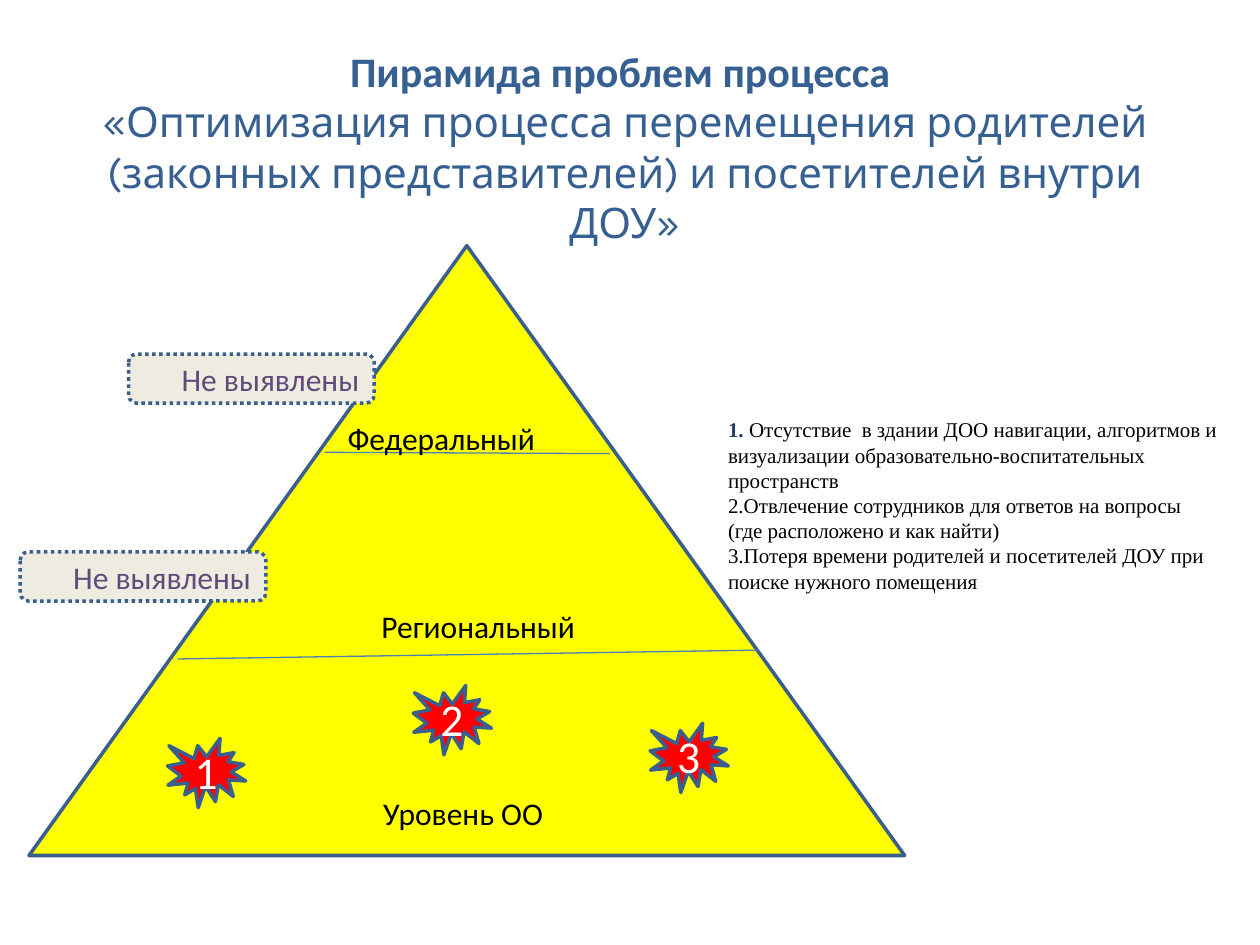
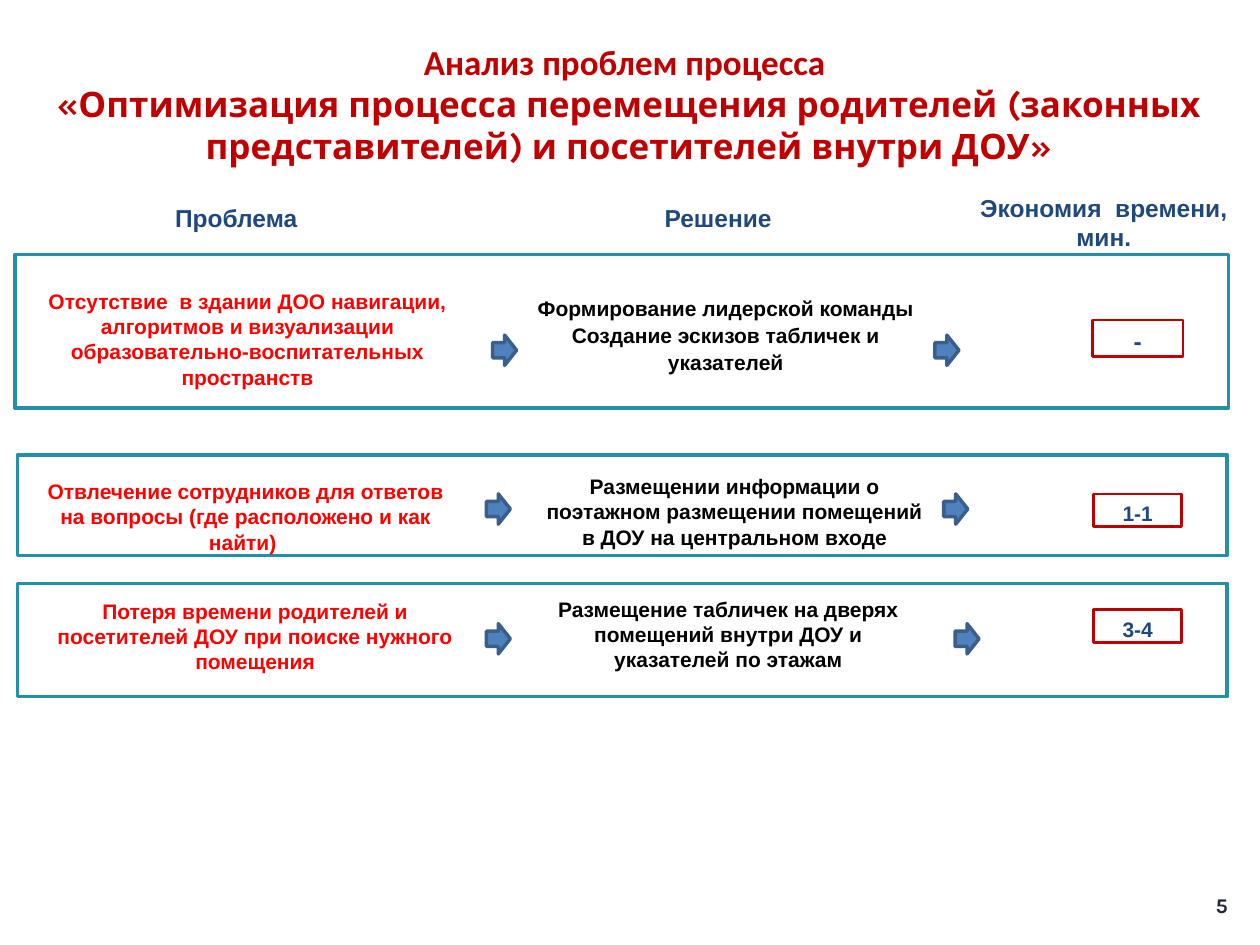
from dataclasses import dataclass
from lxml.etree import SubElement
from pptx import Presentation
from pptx.dml.color import RGBColor
from pptx.enum.dml import MSO_LINE
from pptx.enum.shapes import MSO_CONNECTOR, MSO_SHAPE as Preset
from pptx.enum.text import MSO_ANCHOR as Anchor, MSO_AUTO_SIZE, PP_ALIGN as Align
from pptx.oxml.ns import qn
from pptx.util import Inches, Pt


@dataclass(frozen=True)
class Style:
    font: str
    size: int
    color: str
    bold: bool = False


class Theme:
    # Colours
    yellow, red, cream, blue = "FFFF00", "FF0000", "EEECE1", "4F81BD"
    outline, divider = "3A5F8C", "4B7EBC"
    teal, crimson = "248FA8", "C00000"
    # Type
    pyramid_title = Style("Calibri", 24, "376092", True)
    pyramid_subtitle = Style("Karla", 24, "376092")
    analysis_title = Style("Calibri", 20, "C00000", True)
    analysis_subtitle = Style("Karla", 20, "C00000", True)
    level = Style("Calibri", 18, "000000")
    finding = Style("Calibri", 18, "604A7B")
    seal = Style("Calibri", 26, "FFFFFF")
    note = Style("Times New Roman", 12, "000000")
    note_number = Style("Times New Roman", 12, "254061", True)
    heading = Style("Arial", 14, "1F497D", True)
    saving = Style("Arial", 12, "1F497D", True)
    problem = Style("Arial", 12, "FF0000", True)
    solution = Style("Arial", 12, "000000", True)
    page_number = Style("Karla", 12, "23263C", True)
    # Text margins: left, top, right, bottom
    margins = (0.1, 0.05, 0.1, 0.05)
    heading_margins = (0.1, 0.05, 0.1, 0.01)
    row_margins = (0.1, 0.09, 0.1, 0.01)


@dataclass(frozen=True)
class Box:
    left: float
    top: float
    width: float
    height: float

    def inside(self, left, top, width, height):
        return Box(self.left + left, self.top + top, width, height)

    def lengths(self):
        return [Inches(round(value, 2))
                for value in (self.left, self.top, self.width, self.height)]


def set_font(font, style):
    font.name, font.size, font.bold = style.font, Pt(style.size), style.bold
    font.color.rgb = RGBColor.from_string(style.color)


def write_text(frame, paras, align=Align.CENTER, anchor=Anchor.TOP,
               margins=Theme.margins, spacing=None):
    """Each paragraph is a list of (text, style) spans."""
    frame.word_wrap = True
    frame.auto_size = MSO_AUTO_SIZE.NONE
    frame.vertical_anchor = anchor
    (frame.margin_left, frame.margin_top,
     frame.margin_right, frame.margin_bottom) = map(Inches, margins)
    for index, spans in enumerate(paras):
        para = frame.add_paragraph() if index else frame.paragraphs[0]
        para.alignment = align
        if spacing:
            para.line_spacing = spacing
        set_font(para.font, spans[0][1])
        for text, style in spans:
            span = para.add_run()
            span.text = text
            if len(spans) > 1:
                set_font(span.font, style)


def add_text(page, box, text, style, **options):
    label = page.shapes.add_textbox(*box.lengths())
    write_text(label.text_frame, [[(line, style)] for line in text.split("\n")], **options)


def add_shape(page, preset, box, fill=None, line=Theme.outline, width=2):
    shape = page.shapes.add_shape(preset, *box.lengths())
    shape.shadow.inherit = False
    if fill:
        shape.fill.solid()
        shape.fill.fore_color.rgb = RGBColor.from_string(fill)
    else:
        shape.fill.background()
    shape.line.color.rgb = RGBColor.from_string(line)
    shape.line.width = Pt(width)
    return shape


def add_divider(page, start, end):
    divider = page.shapes.add_connector(
        MSO_CONNECTOR.STRAIGHT, *[Inches(round(value, 2)) for value in start + end])
    divider.line.color.rgb = RGBColor.from_string(Theme.divider)
    divider.line.width = Pt(0.75)
    SubElement(divider._element.spPr, qn("a:effectLst"))


def add_page(deck, box, title, title_style, subtitle_style, anchor):
    page = deck.slides.add_slide(deck.slide_layouts[5])
    holder = page.shapes.title
    holder.left, holder.top, holder.width, holder.height = box.lengths()
    subtitle = ("«Оптимизация процесса перемещения родителей "
                "(законных представителей) и посетителей внутри ДОУ»")
    write_text(holder.text_frame,
               [[(title, title_style)], [(subtitle, subtitle_style)]], anchor=anchor)
    return page


# Pyramid page
def draw_pyramid(page, box):
    add_shape(page, Preset.ISOSCELES_TRIANGLE, box, Theme.yellow)
    for x1, y1, x2, y2 in [(2.35, 1.64, 4.61, 1.65), (1.18, 3.28, 5.79, 3.21)]:
        add_divider(page, (box.left + x1, box.top + y1), (box.left + x2, box.top + y2))

    # Levels
    levels = [("Федеральный", 2.43, 1.88, Align.LEFT),
              ("Региональный", 2.04, 3.05, Align.CENTER),
              ("Уровень ОО", 2.04, 2.81, Align.CENTER)]
    for index, (name, left, width, align) in enumerate(levels):
        place = box.inside(left, 1.33 + 1.485 * index, width, 0.38)
        add_text(page, place, name, Theme.level, align=align)

    # Numbered problems
    for number, (left, top) in enumerate([(1.1, 3.91), (3.05, 3.49), (4.93, 3.79)], 1):
        seal = add_shape(page, Preset.EXPLOSION1, box.inside(left, top, 0.62, 0.55), Theme.red)
        write_text(seal.text_frame, [[(str(number), Theme.seal)]], anchor=Anchor.MIDDLE)
        seal.text_frame.word_wrap = False

    # Findings on the upper levels
    for left, top in [(0.79, 0.86), (-0.07, 2.43)]:
        tag = add_shape(page, Preset.ROUNDED_RECTANGLE,
                        box.inside(left, top, 1.95, 0.39), Theme.cream)
        tag.line.dash_style = MSO_LINE.ROUND_DOT
        write_text(tag.text_frame, [[("Не выявлены", Theme.finding)]],
                   align=Align.RIGHT, anchor=Anchor.MIDDLE)


def draw_problem_list(page, box):
    problems = [
        [("1. ", Theme.note_number),
         ("Отсутствие  в здании ДОО навигации, алгоритмов и визуализации "
          "образовательно-воспитательных пространств", Theme.note)],
        [("2.Отвлечение сотрудников для ответов на вопросы "
          "(где расположено и как найти)", Theme.note)],
        [("3.Потеря времени родителей и посетителей ДОУ при поиске нужного помещения",
          Theme.note)],
    ]
    frame = page.shapes.add_textbox(*box.lengths()).text_frame
    write_text(frame, problems, align=Align.LEFT)


def build_pyramid_page(deck):
    page = add_page(deck, Box(0.31, 0.31, 9.3, 1.31), "Пирамида проблем процесса ",
                    Theme.pyramid_title, Theme.pyramid_subtitle, Anchor.TOP)
    draw_pyramid(page, Box(0.23, 1.95, 6.95, 4.84))
    draw_problem_list(page, Box(5.68, 3.26, 4.1, 1.51))


# Analysis page
@dataclass(frozen=True)
class Row:
    """Places of the parts are relative to the row's frame."""
    frame: Box
    problem: str
    problem_at: tuple
    solution: str
    solution_at: tuple
    saving: str
    saving_at: tuple
    arrows_at: tuple
    arrow_top: float
    spacing: float = None
    saving_style: Style = Theme.saving


ROWS = [
    Row(Box(0.12, 2.02, 9.63, 1.22),
        "Отсутствие  в здании ДОО навигации, алгоритмов и визуализации "
        "образовательно-воспитательных пространств", (0.14, 0.18, 3.41, 1.07),
        "Формирование лидерской команды\nСоздание эскизов табличек и указателей",
        (4.03, 0.22, 3.22, 0.97),
        "-", (8.55, 0.52, 0.72, 0.29), (3.79, 7.3), 0.64, 1.07, Theme.heading),
    Row(Box(0.14, 3.61, 9.6, 0.8),
        "Отвлечение сотрудников для ответов на вопросы (где расположено и как найти) ",
        (0.09, 0.1, 3.44, 0.71),
        "Размещении информации о поэтажном размещении помещений в ДОУ на центральном входе",
        (4.08, 0.06, 3.22, 0.71),
        "1-1", (8.54, 0.31, 0.7, 0.26), (3.72, 7.35), 0.31),
    Row(Box(0.14, 4.63, 9.6, 0.9),
        "Потеря времени родителей и посетителей ДОУ при поиске нужного помещения",
        (0.09, 0.03, 3.59, 0.71),
        "Размещение табличек на дверях помещений внутри ДОУ и указателей по этажам",
        (4.03, 0.01, 3.22, 0.71),
        "3-4", (8.54, 0.21, 0.7, 0.26), (3.72, 7.44), 0.32),
]


def draw_headings(page, box):
    headings = [("Проблема", 0.96, 0.08, 1.83, 0.3),
                ("Решение", 4.83, 0.08, 1.74, 0.3),
                ("Экономия  времени, мин.", 7.52, 0, 2.48, 0.53)]
    for text, *place in headings:
        add_text(page, box.inside(*place), text, Theme.heading, margins=Theme.heading_margins)


def draw_row(page, row):
    box = row.frame
    add_shape(page, Preset.RECTANGLE, box, line=Theme.teal)
    add_text(page, box.inside(*row.problem_at), row.problem, Theme.problem,
             margins=Theme.row_margins)
    add_text(page, box.inside(*row.solution_at), row.solution, Theme.solution,
             margins=Theme.row_margins, spacing=row.spacing)
    for left in row.arrows_at:
        add_shape(page, Preset.RIGHT_ARROW,
                  box.inside(left, row.arrow_top, 0.19, 0.24), Theme.blue)
    saving = add_shape(page, Preset.RECTANGLE, box.inside(*row.saving_at),
                       line=Theme.crimson, width=1.5)
    write_text(saving.text_frame, [[(row.saving, row.saving_style)]],
               anchor=Anchor.MIDDLE, margins=Theme.row_margins, spacing=0.8)


def build_analysis_page(deck):
    page = add_page(deck, Box(0.24, 0.36, 9.5, 0.93), "Анализ проблем процесса ",
                    Theme.analysis_title, Theme.analysis_subtitle, Anchor.MIDDLE)
    draw_headings(page, Box(0, 1.48, 10, 0.53))
    for row in ROWS:
        draw_row(page, row)
    add_text(page, Box(9.45, 7.03, 0.49, 0.31), "5", Theme.page_number, anchor=Anchor.MIDDLE)


def main():
    deck = Presentation()
    deck.slide_width, deck.slide_height = Inches(10), Inches(7.5)
    build_pyramid_page(deck)
    build_analysis_page(deck)
    deck.save("out.pptx")


if __name__ == "__main__":
    main()
